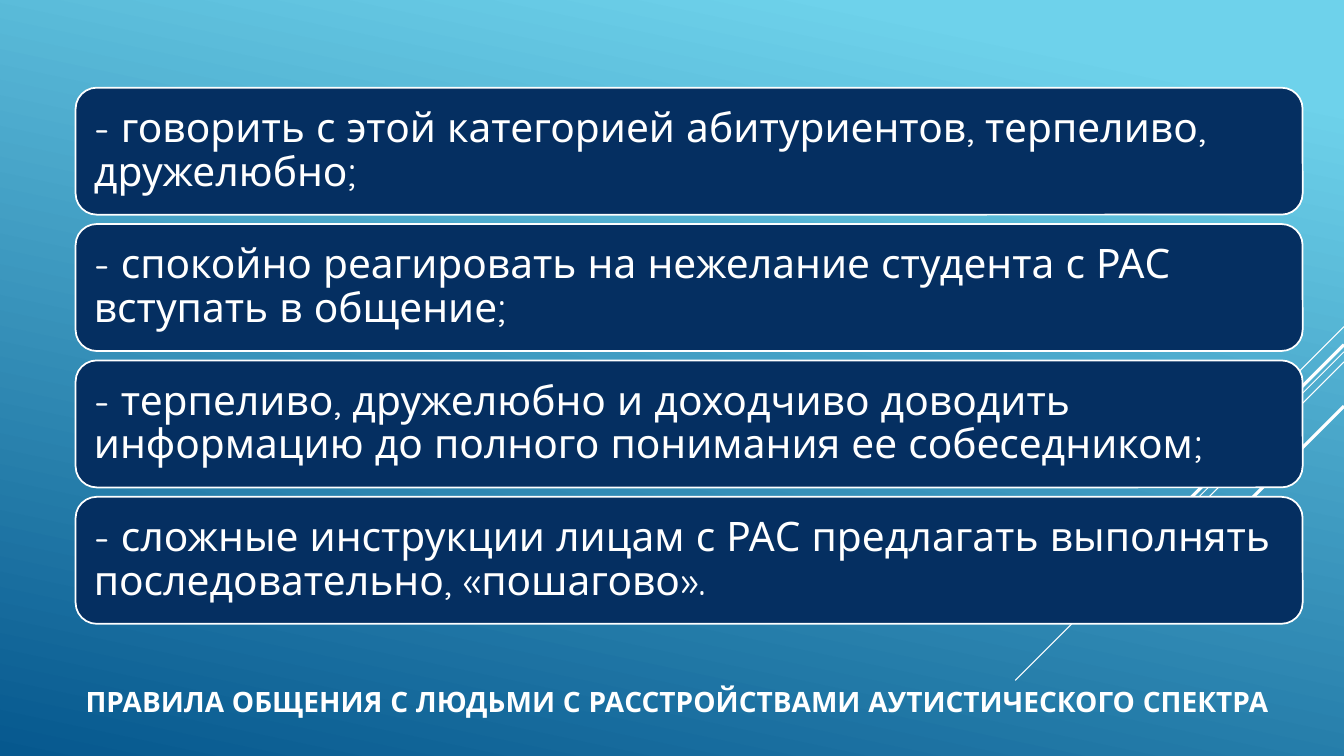
from pptx import Presentation
from pptx.dml.color import RGBColor
from pptx.enum.shapes import MSO_CONNECTOR, MSO_SHAPE
from pptx.enum.text import MSO_ANCHOR, PP_ALIGN
from pptx.oxml.ns import qn
from pptx.util import Inches, Pt
from lxml import etree

# Content
TITLE = "ПРАВИЛА ОБЩЕНИЯ С ЛЮДЬМИ С РАССТРОЙСТВАМИ АУТИСТИЧЕСКОГО СПЕКТРА"
RULES = [
    "- говорить с этой категорией абитуриентов, терпеливо, дружелюбно;",
    "- спокойно реагировать на нежелание студента с РАС вступать в общение;",
    "- терпеливо, дружелюбно и доходчиво доводить информацию до полного понимания ее собеседником;",
    "- сложные инструкции лицам с РАС предлагать выполнять последовательно, «пошагово».",
]
# Diagonal rays: height at the right edge, horizontal run, line width
RAYS = [(3.24, 1.0, 0.75), (3.49, 3.26, 0.75), (3.59, 2.07, 0.75),
        (3.42, 1.91, 2.25), (4.03, 1.39, 2.25)]
GRADIENT = [(0.1, "6ED2EB"), (1.0, "06588E")]
WHITE, NAVY = "FFFFFF", "052F61"
FONT = "Quicksand"

# Layout in inches
SLIDE_W, SLIDE_H = 13.33, 7.5
LEFT = 0.75
CARD_TOP, CARD_W, CARD_H, CARD_PITCH = 0.87, 12.17, 1.26, 1.353
CARD_INSET = 0.18


def color(hex_value):
    return RGBColor.from_string(hex_value)


def write(tf, text, size, inset_x, inset_y, bold=False):
    tf.word_wrap = True
    tf.vertical_anchor = MSO_ANCHOR.MIDDLE
    tf.margin_left = tf.margin_right = Inches(inset_x)
    tf.margin_top = tf.margin_bottom = Inches(inset_y)
    p = tf.paragraphs[0]
    p.text = text
    p.alignment = PP_ALIGN.LEFT
    p.line_spacing = 0.9
    font = p.runs[0].font
    font.name, font.size, font.bold = FONT, Pt(size), bold
    font.color.rgb = color(WHITE)


prs = Presentation()
prs.slide_width, prs.slide_height = Inches(SLIDE_W), Inches(SLIDE_H)
s = prs.slides.add_slide(prs.slide_layouts[6])

# Background
fill = s.background.fill
fill.gradient()
fill.gradient_angle = 258
for stop, (position, hex_value) in zip(fill.gradient_stops, GRADIENT):
    stop.position = position
    stop.color.rgb = color(hex_value)

# Rays, all falling at 45 degrees from the right edge
for y, run, width in RAYS:
    ray = s.shapes.add_connector(
        MSO_CONNECTOR.STRAIGHT, Inches(SLIDE_W), Inches(y),
        Inches(SLIDE_W - run), Inches(y + run))
    ray.line.color.rgb = color(WHITE)
    ray.line.width = Pt(width)
    etree.SubElement(ray._element.spPr, qn("a:effectLst"))

# Title
title = s.shapes.add_textbox(Inches(LEFT), Inches(6.63), Inches(12.28), Inches(0.7))
write(title.text_frame, TITLE, 20, 0.1, 0.05, bold=True)

# Rule cards
for i, rule in enumerate(RULES):
    sp = s.shapes.add_shape(
        MSO_SHAPE.ROUNDED_RECTANGLE, Inches(LEFT), Inches(CARD_TOP + i * CARD_PITCH),
        Inches(CARD_W), Inches(CARD_H))
    sp.shadow.inherit = False
    sp.fill.solid()
    sp.fill.fore_color.rgb = color(NAVY)
    sp.line.color.rgb = color(WHITE)
    sp.line.width = Pt(1.25)
    # Rounded corners already inset the text area by 0.06
    write(sp.text_frame, rule, 29, CARD_INSET - 0.06, CARD_INSET - 0.06)

prs.save("out.pptx")
